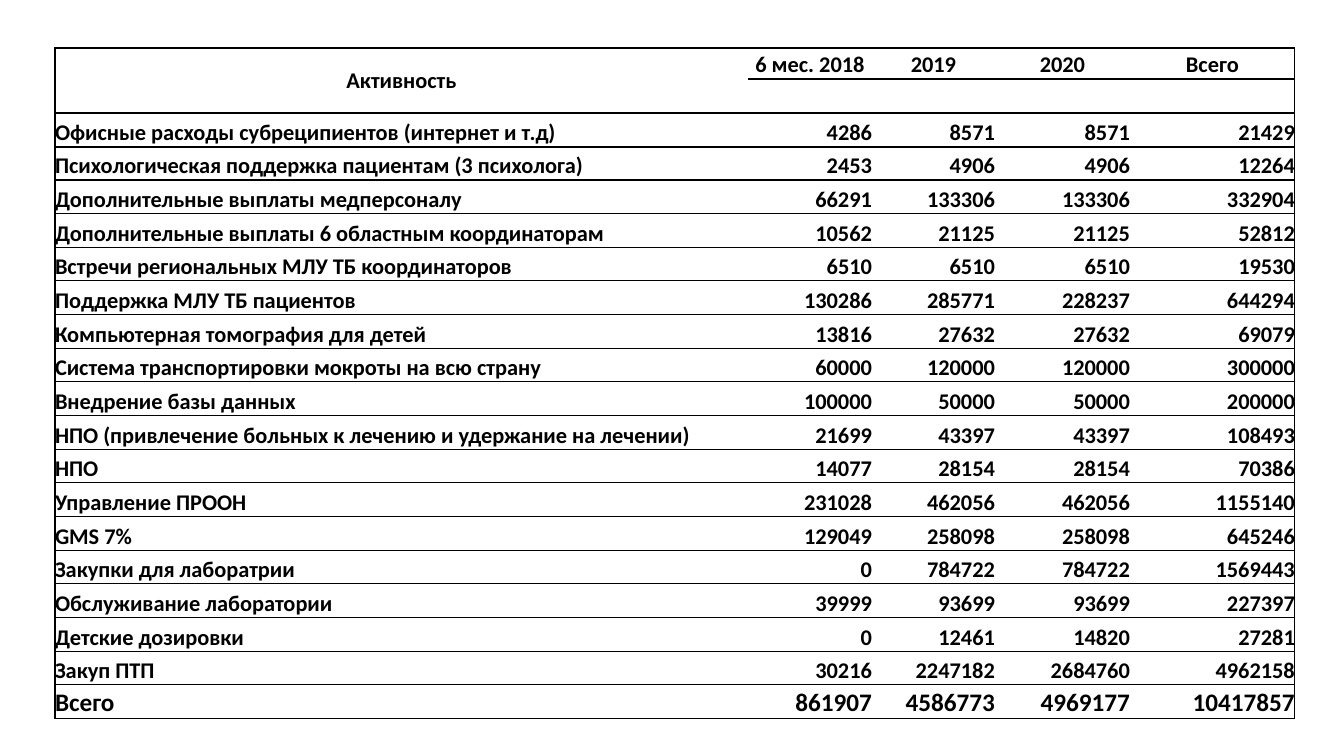
from typing import NamedTuple

from lxml.etree import SubElement
from pptx import Presentation
from pptx.dml.color import RGBColor
from pptx.enum.text import MSO_ANCHOR, PP_ALIGN
from pptx.oxml.ns import qn
from pptx.table import _Cell
from pptx.util import Emu, Pt

BLACK, WHITE = "000000", "FFFFFF"
LEFT, TOP = 55, 48
WIDTHS = (693, 124, 123, 135, 165)
HEADS = (31, 34)
BODY = 606  # height of all rows below the header


class Cost(NamedTuple):
    name: str
    half: int
    year1: int
    year2: int
    total: int


TITLES = ("Активность", "6 мес. 2018", "2019", "2020", "Всего")
COSTS = (
    Cost("Офисные расходы субреципиентов (интернет и т.д)", 4286, 8571, 8571, 21429),
    Cost("Психологическая поддержка пациентам (3 психолога)", 2453, 4906, 4906, 12264),
    Cost("Дополнительные выплаты медперсоналу", 66291, 133306, 133306, 332904),
    Cost("Дополнительные выплаты 6 областным координаторам", 10562, 21125, 21125, 52812),
    Cost("Встречи региональных МЛУ ТБ координаторов", 6510, 6510, 6510, 19530),
    Cost("Поддержка МЛУ ТБ пациентов", 130286, 285771, 228237, 644294),
    Cost("Компьютерная томография для детей", 13816, 27632, 27632, 69079),
    Cost("Система транспортировки мокроты на всю страну", 60000, 120000, 120000, 300000),
    Cost("Внедрение базы данных", 100000, 50000, 50000, 200000),
    Cost("НПО (привлечение больных к лечению и удержание на лечении)",
         21699, 43397, 43397, 108493),
    Cost("НПО", 14077, 28154, 28154, 70386),
    Cost("Управление ПРООН", 231028, 462056, 462056, 1155140),
    Cost("GMS 7%", 129049, 258098, 258098, 645246),
    Cost("Закупки для лаборатрии", 0, 784722, 784722, 1569443),
    Cost("Обслуживание лаборатории", 39999, 93699, 93699, 227397),
    Cost("Детские дозировки", 0, 12461, 14820, 27281),
    Cost("Закуп ПТП", 30216, 2247182, 2684760, 4962158),
    Cost("Всего", 861907, 4586773, 4969177, 10417857),
)


def px(n: int) -> Emu:
    return Emu(round(n * 914400 / 100.8))


def color(code: str) -> RGBColor:
    return RGBColor.from_string(code)


def border(cell: _Cell, sides: str) -> None:
    """Draw the sides named by L, R, T and B, and clear the others."""
    props = cell._tc.get_or_add_tcPr()
    for side in "LRTB":
        line = SubElement(props, qn(f"a:ln{side}"), w=str(Pt(1)))
        if side in sides:
            fill = SubElement(line, qn("a:solidFill"))
            SubElement(fill, qn("a:srgbClr"), val=BLACK)
        else:
            SubElement(line, qn("a:noFill"))


def frame(cell: _Cell, col: int) -> None:
    """Give a cell its rules, fill and zero margins."""
    border(cell, "TB" + {0: "L", len(WIDTHS) - 1: "R"}.get(col, ""))
    cell.fill.solid()
    cell.fill.fore_color.rgb = color(WHITE)
    cell.margin_left = cell.margin_right = 0
    cell.margin_top = cell.margin_bottom = 0
    cell.vertical_anchor = MSO_ANCHOR.BOTTOM


def write(cell: _Cell, text: str, align: PP_ALIGN, size: int = 16) -> None:
    cell.text_frame.text = text
    para = cell.text_frame.paragraphs[0]
    para.alignment = align
    font = para.runs[0].font
    font.name, font.size, font.bold = "Calibri", Pt(size), True
    font.color.rgb = color(BLACK)


def main() -> None:
    deck = Presentation()
    deck.slide_width, deck.slide_height = px(1344), px(756)
    slide = deck.slides.add_slide(deck.slide_layouts[6])

    count = len(COSTS)
    edges = [round(BODY * i / count) for i in range(count + 1)]
    heights = [*HEADS, *(b - a for a, b in zip(edges, edges[1:]))]
    table = slide.shapes.add_table(
        len(heights), len(WIDTHS), px(LEFT), px(TOP), px(sum(WIDTHS)), px(sum(heights))
    ).table
    table.first_row = table.horz_banding = False
    for col, width in zip(table.columns, WIDTHS):
        col.width = px(width)
    for row, height in zip(table.rows, heights):
        row.height = px(height)
        for i, cell in enumerate(row.cells):
            frame(cell, i)

    for i, title in enumerate(TITLES):
        write(table.cell(0, i), title, PP_ALIGN.CENTER)
    corner = table.cell(0, 0)
    corner.merge(table.cell(1, 0))
    corner.vertical_anchor = MSO_ANCHOR.MIDDLE

    for r, cost in enumerate(COSTS, len(HEADS)):
        size = 18 if cost is COSTS[-1] else 16
        for i, value in enumerate(cost):
            align = PP_ALIGN.RIGHT if i else PP_ALIGN.LEFT
            write(table.cell(r, i), str(value), align, size)

    deck.save("out.pptx")


if __name__ == "__main__":
    main()
